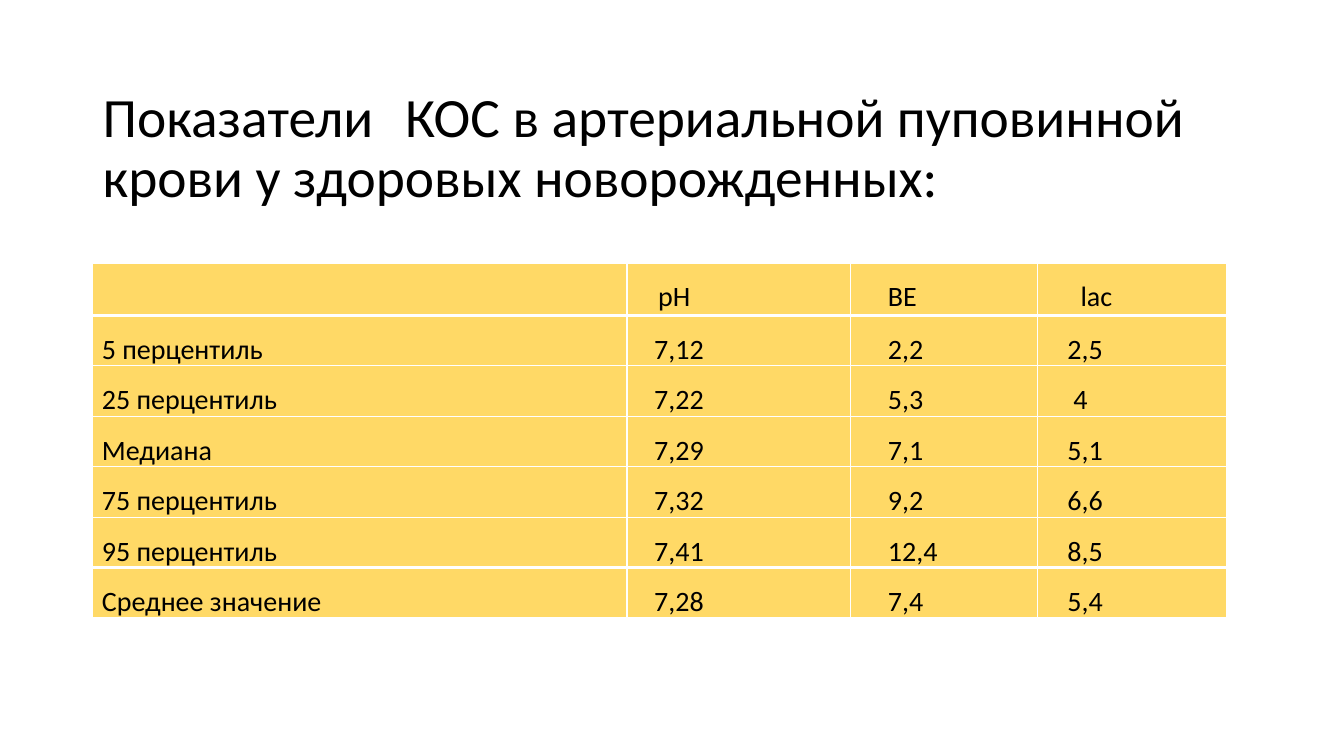
from dataclasses import dataclass

from lxml import etree
from pptx import Presentation
from pptx.dml.color import RGBColor
from pptx.enum.text import MSO_ANCHOR
from pptx.oxml.ns import qn
from pptx.slide import Slide
from pptx.table import Table, _Cell
from pptx.text.text import _Paragraph
from pptx.util import Pt

MIDDLE = MSO_ANCHOR.MIDDLE
BLANK_LAYOUT = 6
FONT = "Calibri"
BLACK, WHITE, YELLOW = "000000", "FFFFFF", "FFD966"
THIN, THICK = 1, 3
TITLE = "Показатели\tКОС в артериальной пуповинной крови у здоровых новорожденных:"


@dataclass(frozen=True)
class Column:
    width: float
    header_indent: float
    indent: float


@dataclass(frozen=True)
class Row:
    height: float
    values: tuple[str, str, str, str]


COLUMNS = [
    Column(381.6, 6.5, 6.5),
    Column(159.84, 22.3, 19.4),
    Column(133.2, 26.6, 26.6),
    Column(135.36, 31, 21.6),
]
ROWS = [
    Row(37.4, ("", "рН", "ВЕ", "lac")),
    Row(36, ("5 перцентиль", "7,12", "2,2", "2,5")),
    Row(34.6, ("25 перцентиль", "7,22", "5,3", "4")),
    Row(34.6, ("Медиана", "7,29", "7,1", "5,1")),
    Row(34.6, ("75 перцентиль", "7,32", "9,2", "6,6")),
    Row(34.6, ("95 перцентиль", "7,41", "12,4", "8,5")),
    Row(34.6, ("Среднее значение", "7,28", "7,4", "5,4")),
]
SPECIAL_INDENTS = {(2, 3): 25.9}
THICK_LINES = {1, len(ROWS) - 1}


def color(value: str) -> RGBColor:
    return RGBColor.from_string(value)


def apply_format(target: object, values: dict[str, object]) -> None:
    for name, value in values.items():
        setattr(target, name, value)


def write(paragraph: _Paragraph, text: str, size: float, spacing: float) -> None:
    paragraph.line_spacing = spacing
    run = paragraph.add_run()
    run.text = text
    apply_format(run.font, {"name": FONT, "size": Pt(size)})
    run.font.color.rgb = color(BLACK)


def line_width(line_index: int) -> int:
    """Return the width of a horizontal table line, counted from the top."""
    return THICK if line_index in THICK_LINES else THIN


def set_borders(cell: _Cell, row_index: int) -> None:
    properties = cell._tc.get_or_add_tcPr()
    widths = {
        "a:lnL": THIN,
        "a:lnR": THIN,
        "a:lnT": line_width(row_index),
        "a:lnB": line_width(row_index + 1),
    }
    for tag, width in widths.items():
        line = etree.SubElement(properties, qn(tag), w=str(Pt(width)))
        fill = etree.SubElement(line, qn("a:solidFill"))
        etree.SubElement(fill, qn("a:srgbClr"), val=WHITE)


def fill_cell(table: Table, row_index: int, column_index: int) -> None:
    cell = table.cell(row_index, column_index)
    column = COLUMNS[column_index]
    indent = column.indent if row_index else column.header_indent
    indent = SPECIAL_INDENTS.get((row_index, column_index), indent)
    apply_format(cell, {
        "margin_left": Pt(indent),
        "margin_right": 0,
        "margin_top": 0,
        "margin_bottom": 0,
    })
    set_borders(cell, row_index)
    cell.fill.solid()
    cell.fill.fore_color.rgb = color(YELLOW)
    text = ROWS[row_index].values[column_index]
    if text:
        write(cell.text_frame.paragraphs[0], text, 20, 1.5)


def add_title(slide: Slide) -> None:
    box = slide.shapes.add_textbox(Pt(66.24), Pt(54.72), Pt(828), Pt(104.4))
    apply_format(box.text_frame, {"word_wrap": True, "vertical_anchor": MIDDLE})
    write(box.text_frame.paragraphs[0], TITLE, 39.6, 0.9)


def add_percentile_table(slide: Slide) -> None:
    width = sum(column.width for column in COLUMNS)
    height = sum(row.height for row in ROWS)
    table = slide.shapes.add_table(
        len(ROWS), len(COLUMNS), Pt(66.24), Pt(187.92), Pt(width), Pt(height)
    ).table
    apply_format(table, {"first_row": False, "horz_banding": False})
    for column_index, column in enumerate(COLUMNS):
        table.columns[column_index].width = Pt(column.width)
    for row_index, row in enumerate(ROWS):
        table.rows[row_index].height = Pt(row.height)
        for column_index in range(len(COLUMNS)):
            fill_cell(table, row_index, column_index)


def main() -> None:
    presentation = Presentation()
    apply_format(presentation, {"slide_width": Pt(960), "slide_height": Pt(540)})
    slide = presentation.slides.add_slide(presentation.slide_layouts[BLANK_LAYOUT])
    add_title(slide)
    add_percentile_table(slide)
    presentation.save("out.pptx")


if __name__ == "__main__":
    main()
